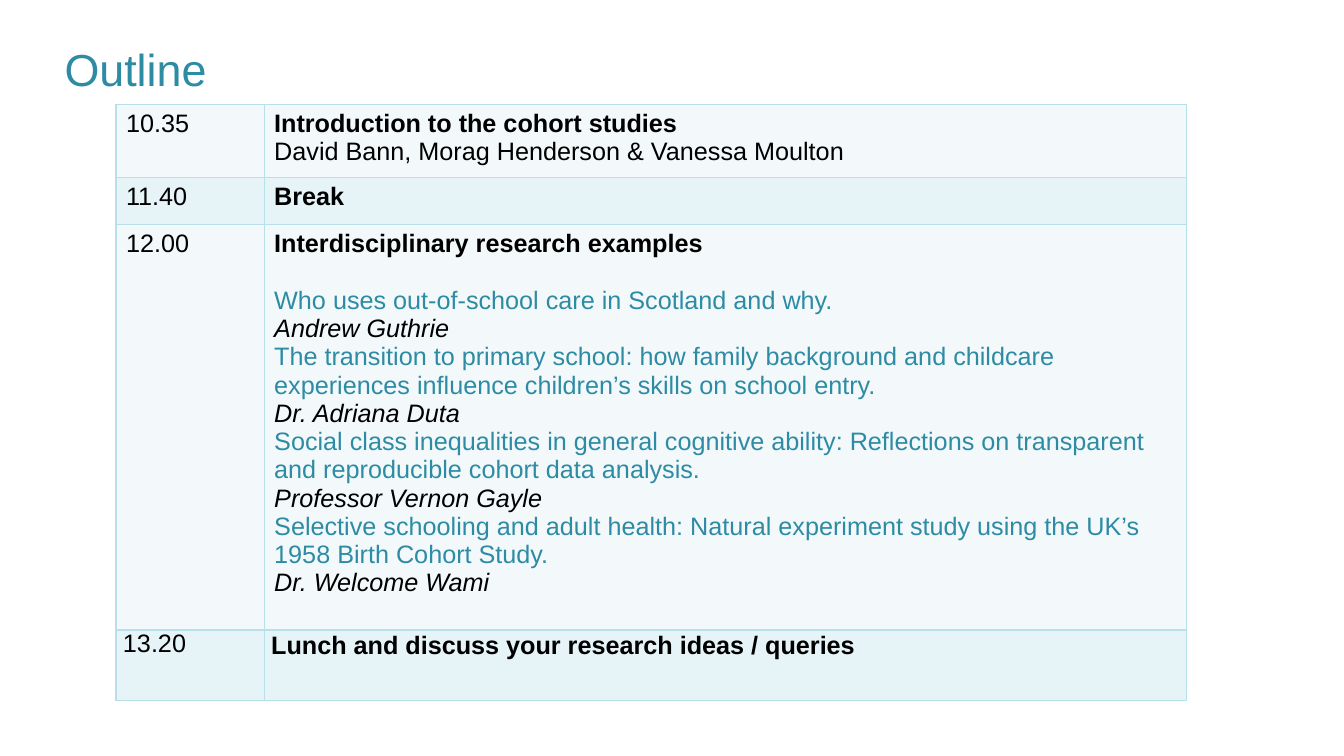
from lxml import etree
from pptx import Presentation
from pptx.dml.color import RGBColor
from pptx.enum.text import MSO_ANCHOR, PP_ALIGN
from pptx.oxml.ns import qn
from pptx.util import Inches, Pt

TOP = MSO_ANCHOR.TOP
LEFT = PP_ALIGN.LEFT
TITLE_ONLY = 5

FONT = "Arial"
TEAL = "2D8BA4"
BLACK = "000000"
BORDER = "B7E0EB"
BANDS = ("F3F9FB", "E6F3F7")

COL_WIDTHS = (1.47, 9.15)
ROW_HEIGHTS = (0.72, 0.47, 4.02, 0.7)

# Each line of a session is (text, kind)
SESSIONS = [
    ("10.35", [("Introduction to the cohort studies", "heading"),
               ("David Bann, Morag Henderson & Vanessa Moulton", "plain")]),
    ("11.40", [("Break", "heading")]),
    ("12.00", [
        ("Interdisciplinary research examples", "heading"),
        ("Who uses out-of-school care in Scotland and why.", "talk"),
        ("Andrew Guthrie", "speaker"),
        ("The transition to primary school: how family background and childcare "
         "experiences influence children’s skills on school entry.", "talk"),
        ("Dr. Adriana Duta", "speaker"),
        ("Social class inequalities in general cognitive ability: Reflections on "
         "transparent and reproducible cohort data analysis.", "talk"),
        ("Professor Vernon Gayle", "speaker"),
        ("Selective schooling and adult health: Natural experiment study using "
         "the UK’s 1958 Birth Cohort Study.", "talk"),
        ("Dr. Welcome Wami", "speaker"),
    ]),
    ("13.20", [("Lunch and discuss your research ideas / queries", "heading")]),
]


def rgb(color):
    return RGBColor.from_string(color)


class Deck:
    def __init__(self):
        self.prs = Presentation()
        self.prs.slide_width = Inches(13.33)
        self.prs.slide_height = Inches(7.5)
        self.slide = self.prs.slides.add_slide(self.prs.slide_layouts[TITLE_ONLY])

    def style(self, p, size, color=BLACK, bold=False, italic=False):
        p.alignment = LEFT
        p.font.name = FONT
        p.font.size = Pt(size)
        p.font.color.rgb = rgb(color)
        p.font.bold = bold
        p.font.italic = italic

    def title(self, text, left, top, width, height):
        sp = self.slide.shapes.title
        sp.left, sp.top = Inches(left), Inches(top)
        sp.width, sp.height = Inches(width), Inches(height)
        tf = sp.text_frame
        tf.margin_left = tf.margin_right = tf.margin_top = tf.margin_bottom = 0
        tf.vertical_anchor = TOP
        tf.text = text
        self.style(tf.paragraphs[0], 32, TEAL)

    def table(self, left, top, col_widths, row_heights):
        table = self.slide.shapes.add_table(
            len(row_heights), len(col_widths), Inches(left), Inches(top),
            Inches(sum(col_widths)), Inches(sum(row_heights))).table
        for column, width in zip(table.columns, col_widths):
            column.width = Inches(width)
        for row, height in zip(table.rows, row_heights):
            row.height = Inches(height)
        return table

    def cell(self, cell, lines, fill):
        self.borders(cell)
        cell.fill.solid()
        cell.fill.fore_color.rgb = rgb(fill)
        cell.vertical_anchor = TOP
        tf = cell.text_frame
        for i, (text, kind) in enumerate(lines):
            p = tf.paragraphs[0] if i == 0 else tf.add_paragraph()
            p.text = text
            self.style(p, 18, TEAL if kind == "talk" else BLACK,
                       bold=kind == "heading", italic=kind == "speaker")
            if kind == "talk" and lines[i - 1][1] == "heading":
                p.space_before = Pt(20.5)

    def borders(self, cell):
        tcPr = cell._tc.get_or_add_tcPr()
        for side in ("a:lnL", "a:lnR", "a:lnT", "a:lnB"):
            ln = etree.SubElement(tcPr, qn(side), w=str(Pt(1)))
            solid = etree.SubElement(ln, qn("a:solidFill"))
            etree.SubElement(solid, qn("a:srgbClr"), val=BORDER)


def main():
    deck = Deck()
    deck.title("Outline", 0.64, 0.41, 12, 0.5)
    table = deck.table(1.15, 1.04, COL_WIDTHS, ROW_HEIGHTS)
    for i, (time, lines) in enumerate(SESSIONS):
        fill = BANDS[i % 2]
        deck.cell(table.cell(i, 0), [(time, "plain")], fill)
        deck.cell(table.cell(i, 1), lines, fill)

    last = len(SESSIONS) - 1
    for column in range(len(COL_WIDTHS)):
        cell = table.cell(last, column)
        cell.margin_left = cell.margin_right = Inches(0.07)
        cell.margin_top = cell.margin_bottom = 0
    lunch = table.cell(last, 1).text_frame.paragraphs[0]
    lunch.line_spacing = 1.07
    lunch.space_after = Pt(8)
    deck.prs.save("out.pptx")


if __name__ == "__main__":
    main()
